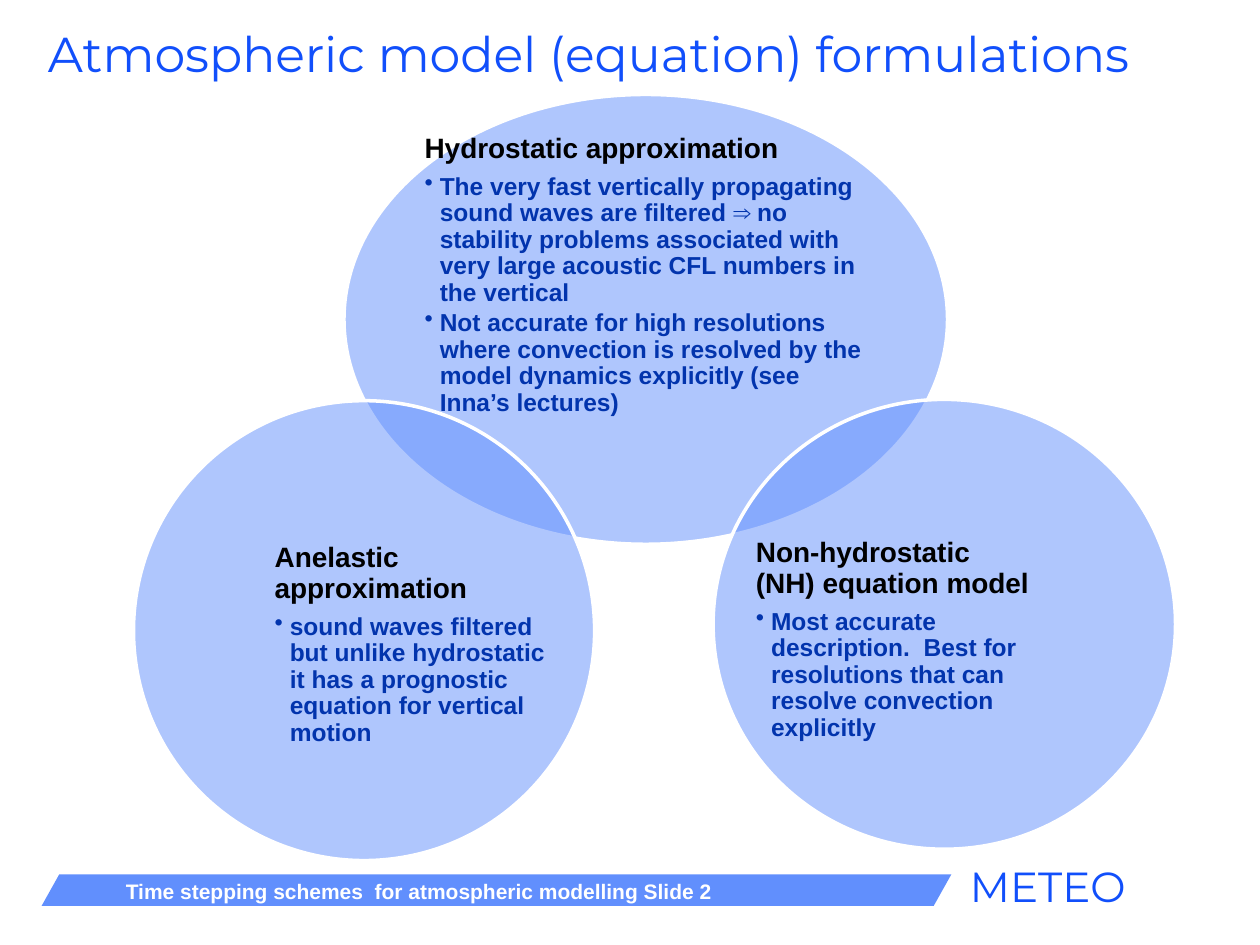
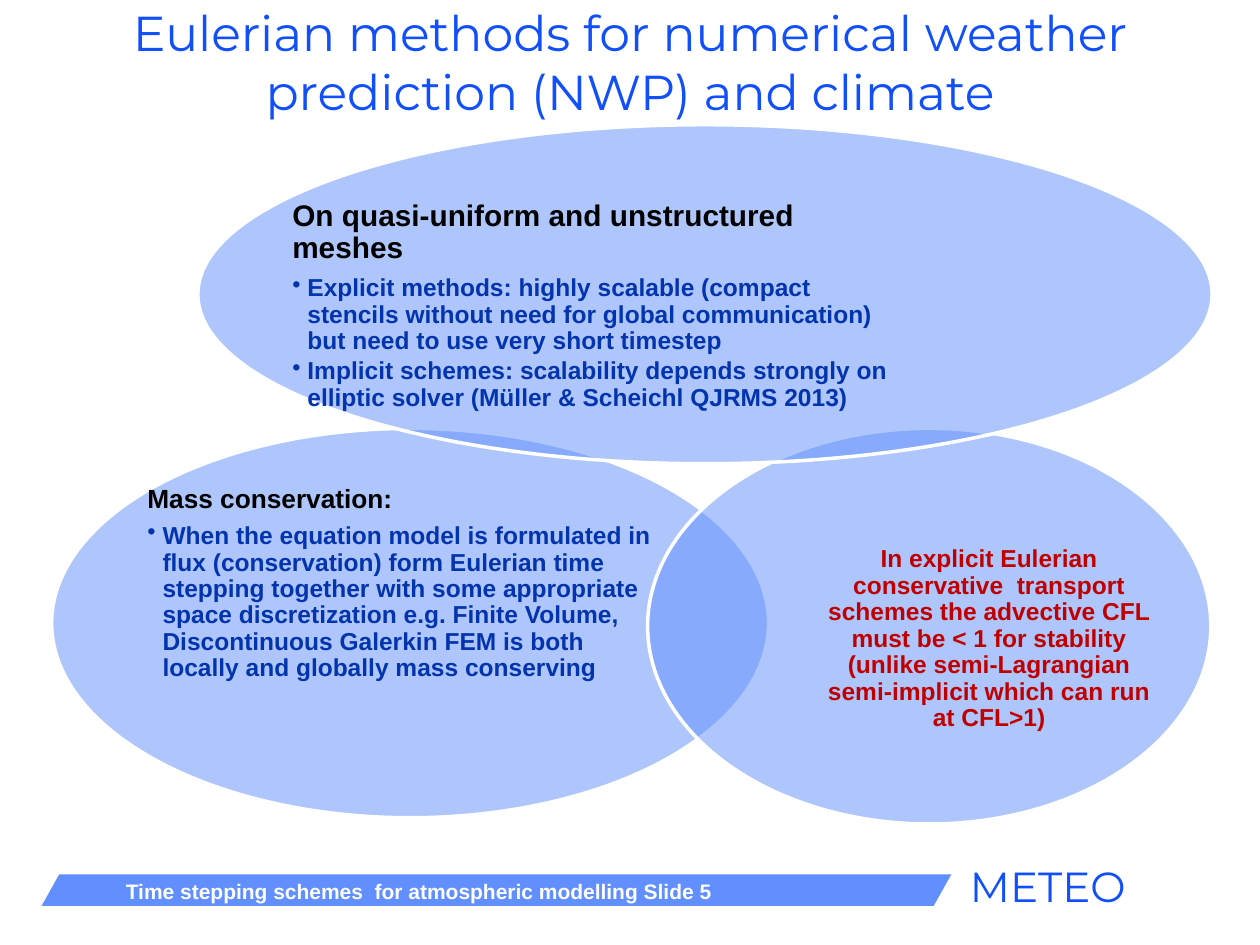
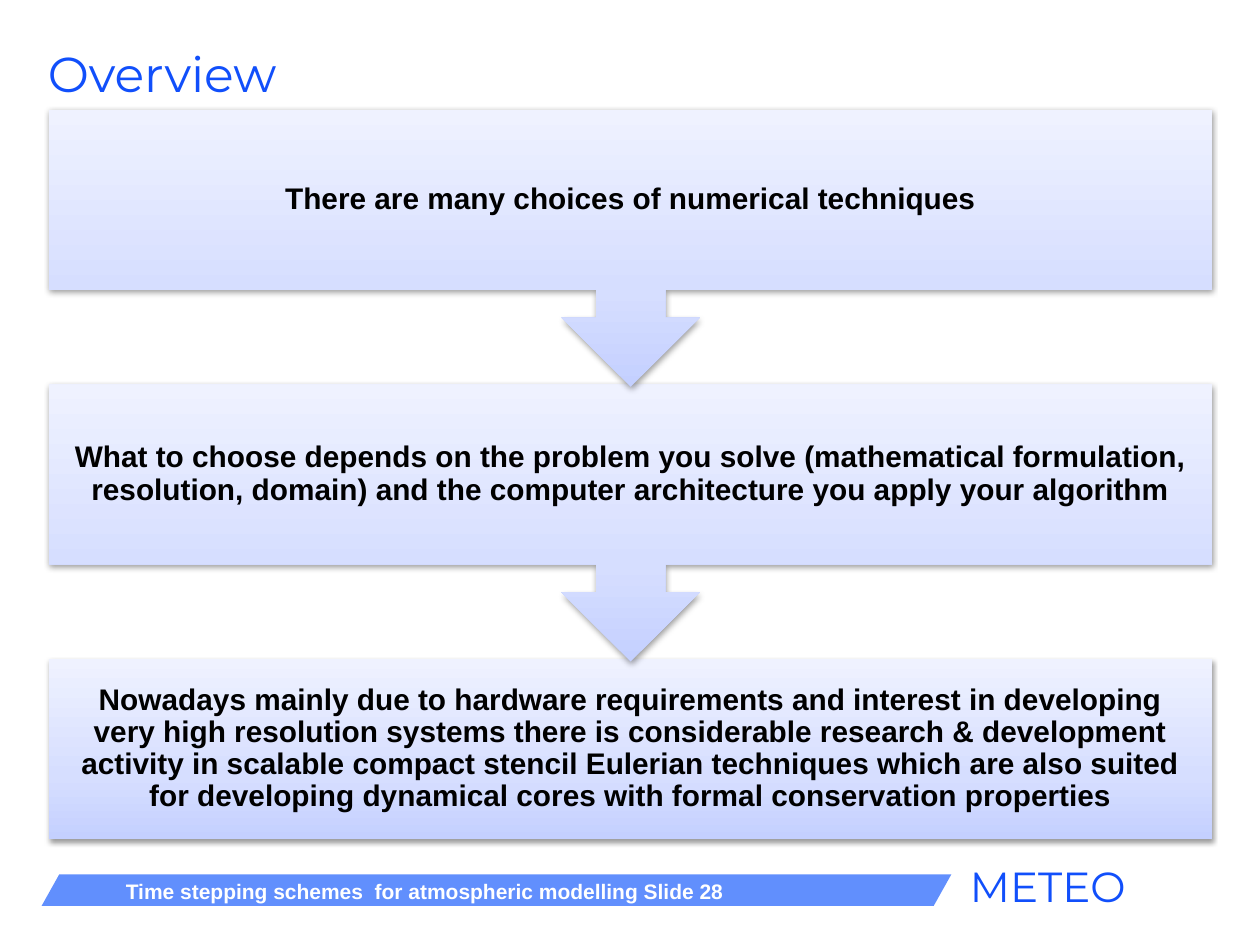
from lxml.etree import SubElement
from pptx import Presentation
from pptx.dml.color import RGBColor
from pptx.enum.shapes import MSO_SHAPE as Form
from pptx.enum.text import MSO_ANCHOR as Anchor, MSO_AUTO_SIZE as Fit, PP_ALIGN as Align
from pptx.oxml import parse_xml
from pptx.oxml.ns import nsdecls, qn
from pptx.util import Inches, Pt

BLUE, BAND, NAVY, RED = "114FFB", "618FFD", "0234AD", "C00000"
BLACK, WHITE = "000000", "FFFFFF"
rgb = RGBColor.from_string

GRAD = f"""<a:gradFill {nsdecls("a")} rotWithShape="0"><a:gsLst>
<a:gs pos="0"><a:srgbClr val="C4D0FF"/></a:gs>
<a:gs pos="35000"><a:srgbClr val="D6DEFF"/></a:gs>
<a:gs pos="100000"><a:srgbClr val="EFF2FF"/></a:gs>
</a:gsLst><a:lin ang="16200000" scaled="0"/></a:gradFill>"""
SHADOW = f"""<a:effectLst {nsdecls("a")}>
<a:outerShdw blurRad="39370" dist="20320" dir="5400000" rotWithShape="0">
<a:srgbClr val="000000"><a:alpha val="38000"/></a:srgbClr></a:outerShdw></a:effectLst>"""


def write(shape, text, bullets=(), size=14, color=BLACK, font="Arial", bold=True,
          align=Align.LEFT, anchor=Anchor.MIDDLE, pad=(0, 0), wrap=True, tight=True):
    """Fill a shape with one lead paragraph and any bullets under it."""
    frame = shape.text_frame
    frame.auto_size = Fit.NONE if wrap else Fit.SHAPE_TO_FIT_TEXT
    frame.word_wrap = wrap
    frame.vertical_anchor = anchor
    frame.margin_left = frame.margin_right = Inches(pad[0])
    frame.margin_top = frame.margin_bottom = Inches(pad[1])
    for i, line in enumerate([text, *bullets]):
        para = frame.add_paragraph() if i else frame.paragraphs[0]
        para.alignment = align
        if i:
            para.level = 1
            props = para._p.get_or_add_pPr()
            props.set("marL", str(Inches(0.12)))
            props.set("indent", str(-Inches(0.12)))
            SubElement(props, qn("a:buChar")).set("char", "•")
        run = para.add_run()
        run.text = line
        run.font.name, run.font.bold = font, bold
        run.font.size = Pt(14 if i else size)
        run.font.color.rgb = rgb(NAVY if i else color)
        if tight:
            para.line_spacing = 0.9
            para.space_after = Pt(14 * 0.15 if i else size * 0.35)


def place(box):
    return [Inches(n) for n in box]


prs = Presentation()
prs.slide_width, prs.slide_height = Inches(10), Inches(7.5)

# Title, its box and alignment, and the number in the footer
heads = [
    ("Atmospheric model (equation) formulations", (0.28, 0.13, 9.45, 0.58), Align.LEFT, 2),
    ("Eulerian methods for numerical weather prediction (NWP) and climate",
     (0, 0.13, 10, 0.71), Align.CENTER, 5),
    ("Overview", (0.28, 0.29, 9.23, 0.58), Align.LEFT, 28),
]
slides = []
for title, box, align, num in heads:
    slide = prs.slides.add_slide(prs.slide_layouts[5])
    slides.append(slide)
    head = slide.shapes.title
    head.left, head.top, head.width, head.height = place(box)
    write(head, title, size=28, color=BLUE, font="Montserrat", bold=False,
          align=align, pad=(0.1, 0.05), tight=False)

    name = slide.shapes.add_textbox(*place((7.6, 6.78, 1.57, 0.57)))
    write(name, "METEO", size=24, color=BLUE, font="Montserrat", bold=False,
          anchor=Anchor.TOP, pad=(0.1, 0.05), wrap=False, tight=False)
    band = slide.shapes.add_shape(Form.PARALLELOGRAM, *place((0.33, 6.94, 7.22, 0.25)))
    band.adjustments[0] = 0.56
    band.shadow.inherit = False
    band.fill.solid()
    band.fill.fore_color.rgb = rgb(BAND)
    band.line.fill.background()
    foot = slide.shapes.add_textbox(*place((0.9, 6.92, 5.09, 0.3)))
    write(foot, f"Time stepping schemes  for atmospheric modelling Slide {num}", size=12,
          color=WHITE, anchor=Anchor.TOP, pad=(0.1, 0.05), wrap=False, tight=False)

# Overlapping ovals: oval box, text box, lead, bullets, format of the lead
models = [
    ((2.73, 0.75, 4.79, 3.57), (3.37, 1.38, 3.51, 1.61), "Hydrostatic approximation",
     ["The very fast vertically propagating sound waves are filtered ⇒ no stability "
      "problems associated with very large acoustic CFL numbers in the vertical",
      "Not accurate for high resolutions where convection is resolved by the model "
      "dynamics explicitly (see Inna’s lectures)"], dict(size=16)),
    ((1.06, 3.18, 3.66, 3.65), (2.18, 4.12, 2.19, 2), "Anelastic approximation",
     ["sound waves filtered but unlike hydrostatic it has a prognostic equation for "
      "vertical motion"], dict(size=16)),
    ((5.66, 3.17, 3.67, 3.57), (6, 4.1, 2.2, 1.96), "Non-hydrostatic (NH) equation model",
     ["Most accurate description.  Best for resolutions that can resolve convection "
      "explicitly"], dict(size=16)),
]
methods = [
    ((0.41, 3.4, 5.69, 3.09), (1.17, 3.94, 4.17, 1.39), "Mass conservation:",
     ["When the equation model is formulated in flux (conservation) form Eulerian time "
      "stepping together with some appropriate space discretization e.g. Finite Volume, "
      "Discontinuous Galerkin FEM is both  locally and globally mass conserving"],
     dict(size=15)),
    ((5.14, 3.4, 4.47, 3.14), (6.51, 4.21, 2.68, 1.73),
     "In explicit Eulerian conservative  transport schemes the advective CFL must be < 1 "
     "for stability (unlike semi-Lagrangian semi-implicit which can run at CFL>1)",
     [], dict(color=RED, align=Align.CENTER)),
    ((1.57, 0.99, 8.05, 2.69), (2.32, 1.69, 4.83, 1.48),
     "On quasi-uniform and unstructured meshes",
     ["Explicit methods: highly scalable (compact stencils without need for global "
      "communication) but need to use very short timestep",
      "Implicit schemes: scalability depends strongly on elliptic solver "
      "(Müller & Scheichl QJRMS 2013)"], dict(size=17)),
]
for slide, ovals in zip(slides, (models, methods)):
    for box, area, lead, bullets, form in ovals:
        oval = slide.shapes.add_shape(Form.OVAL, *place(box))
        oval.shadow.inherit = False
        oval.fill.solid()
        oval.fill.fore_color.rgb = rgb(BAND)
        tint = oval.element.spPr.find(".//" + qn("a:srgbClr"))
        SubElement(tint, qn("a:alpha")).set("val", "50000")
        oval.line.color.rgb = rgb(WHITE)
        oval.line.width = Pt(2)
        write(slide.shapes.add_textbox(*place(area)), lead, bullets, **form)

# Steps from top to bottom, drawn from the last one up
steps = [
    "There are many choices of numerical techniques",
    "What to choose depends on the problem you solve (mathematical formulation, "
    "resolution, domain) and the computer architecture you apply your algorithm",
    "Nowadays mainly due to hardware requirements and interest in developing very high "
    "resolution systems there is considerable research & development activity in scalable "
    "compact stencil Eulerian techniques which are also suited for developing dynamical "
    "cores with formal conservation properties",
]
shapes = slides[2].shapes
last = len(steps) - 1
for i in range(last, -1, -1):
    top = 0.87 + 2.18 * i
    kind, tall, turn = ((Form.RECTANGLE, 1.43, 0) if i == last
                        else (Form.UP_ARROW_CALLOUT, 2.2, 180))
    step = shapes.add_shape(kind, *place((0.39, top, 9.23, tall)))
    step.rotation = turn
    step.line.fill.background()
    props = step.element.spPr
    props.find(qn("a:ln")).addprevious(parse_xml(GRAD))
    props.append(parse_xml(SHADOW))
    label = shapes.add_textbox(*place((0.39, top, 9.23, 1.43)))
    write(label, steps[i], size=17, align=Align.CENTER, pad=(0.13, 0.13))

prs.save("out.pptx")
